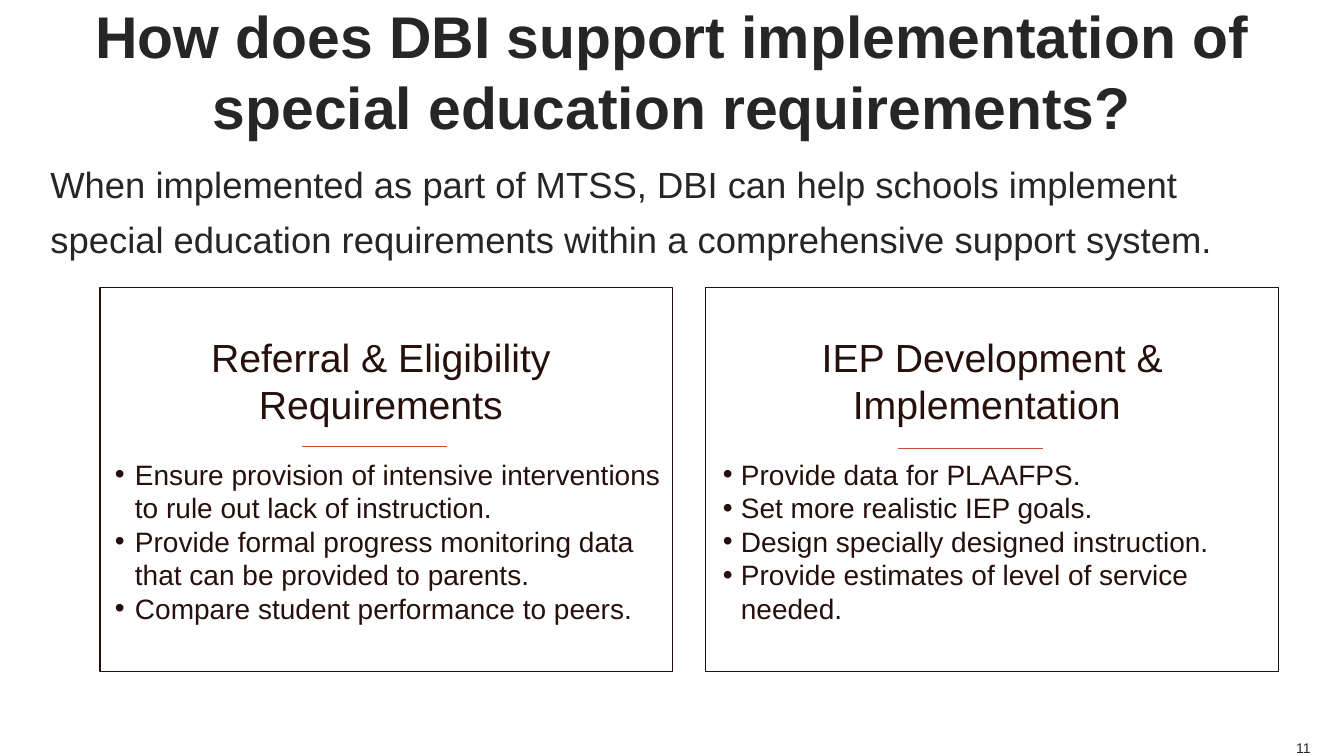
import pptx
import pptx.util
import pptx.dml.color
import pptx.enum.shapes
import pptx.enum.text
import pptx.oxml.ns
from lxml import etree

Inches, Pt = pptx.util.Inches, pptx.util.Pt
RGBColor = pptx.dml.color.RGBColor
ALIGN = pptx.enum.text.PP_ALIGN
ANCHOR = pptx.enum.text.MSO_ANCHOR
qn = pptx.oxml.ns.qn

WHITE = RGBColor(0xFF, 0xFF, 0xFF)
GRAY = RGBColor(0x26, 0x26, 0x26)
BROWN = RGBColor(0x26, 0x10, 0x0B)
RUST = RGBColor(0xC2, 0x51, 0x31)

TITLE = {"size": Pt(42), "bold": True, "color": GRAY}
INTRO = {"size": Pt(26), "color": GRAY}
NUMBER = {"size": Pt(10), "color": GRAY}
HEADING = {"size": Pt(28), "color": BROWN}
BULLET = {"size": Pt(20), "color": BROWN}

CARD_TOP, CARD_W, CARD_H = 2.85, 5.68, 3.81
RULE_W = 1.43

# Card left, heading, bullet hang, bullets, rule left, rule y
CARDS = [
    (0.99, "Referral & Eligibility \vRequirements ", 0.2,
     ["Ensure provision of intensive interventions to rule out lack of instruction.",
      "Provide formal progress monitoring data that can be provided to parents.",
      "Compare student performance to peers."], 3, 4.43),
    (7, "IEP Development & Implementation ", 0.18,
     ["Provide data for PLAAFPS.",
      "Set more realistic IEP goals.",
      "Design specially designed instruction.",
      "Provide estimates of level of service needed."], 8.91, 4.45),
]


def write(p, text, style, align):
    """Fill a paragraph and apply its font style."""
    p.text = text
    p.alignment = align
    for r in p.runs:
        r.font.name = "Arial"
        for name, value in style.items():
            if name == "color":
                r.font.color.rgb = value
            else:
                setattr(r.font, name, value)


def add_bullet(p, hang):
    pPr = p._p.get_or_add_pPr()
    pPr.set("marL", str(Inches(0.25)))
    pPr.set("indent", str(-Inches(hang)))
    etree.SubElement(pPr, qn("a:buFont")).set("typeface", "Arial")
    etree.SubElement(pPr, qn("a:buChar")).set("char", "•")


def add_text(s, box, text, style, align, anchor, wrap=True):
    tf = s.shapes.add_textbox(*map(Inches, box)).text_frame
    frame = {"margin_left": 0, "margin_right": 0, "margin_top": 0,
             "margin_bottom": 0, "word_wrap": wrap, "vertical_anchor": anchor}
    for name, value in frame.items():
        setattr(tf, name, value)
    p = tf.paragraphs[0]
    write(p, text, style, align)
    return p


def add_card(s, left, heading, hang, bullets):
    sp = s.shapes.add_shape(pptx.enum.shapes.MSO_SHAPE.RECTANGLE,
                            *map(Inches, (left, CARD_TOP, CARD_W, CARD_H)))
    sp.shadow.inherit = False
    sp.fill.solid()
    sp.fill.fore_color.rgb = WHITE
    sp.line.color.rgb = BROWN
    sp.line.width = Pt(1)
    tf = sp.text_frame
    tf.word_wrap = True
    tf.vertical_anchor = ANCHOR.MIDDLE
    p = tf.paragraphs[0]
    write(p, heading, HEADING, ALIGN.CENTER)
    p.space_after = Pt(21)
    for text in bullets:
        p = tf.add_paragraph()
        add_bullet(p, hang)
        write(p, text, BULLET, ALIGN.LEFT)


def add_rule(s, left, y):
    line = s.shapes.add_connector(pptx.enum.shapes.MSO_CONNECTOR.STRAIGHT,
                                  *map(Inches, (left, y, left + RULE_W, y)))
    line.line.color.rgb = RUST
    line.line.width = Pt(0.5)
    etree.SubElement(line._element.spPr, qn("a:effectLst"))


def main():
    prs = pptx.Presentation()
    prs.slide_width, prs.slide_height = Inches(13.33), Inches(7.5)
    s = prs.slides.add_slide(prs.slide_layouts[6])

    # Title and introduction
    add_text(s, (0.5, 0, 12.33, 1.4),
             "How does DBI support implementation of special education requirements?",
             TITLE, ALIGN.CENTER, ANCHOR.MIDDLE)
    p = add_text(s, (0.5, 1.5, 12.33, 1.2),
                 "When implemented as part of MTSS, DBI can help schools implement "
                 "special education requirements within a comprehensive support system.",
                 INTRO, ALIGN.LEFT, ANCHOR.TOP)
    p.line_spacing = 1.25

    # Cards with a short rule under each heading
    for left, heading, hang, bullets, rule_left, rule_y in CARDS:
        add_card(s, left, heading, hang, bullets)
        add_rule(s, rule_left, rule_y)

    # Slide number
    add_text(s, (12.83, 7.33, 0.17, 0.17), "11", NUMBER,
             ALIGN.RIGHT, ANCHOR.BOTTOM, wrap=False)

    prs.save("out.pptx")


if __name__ == "__main__":
    main()
